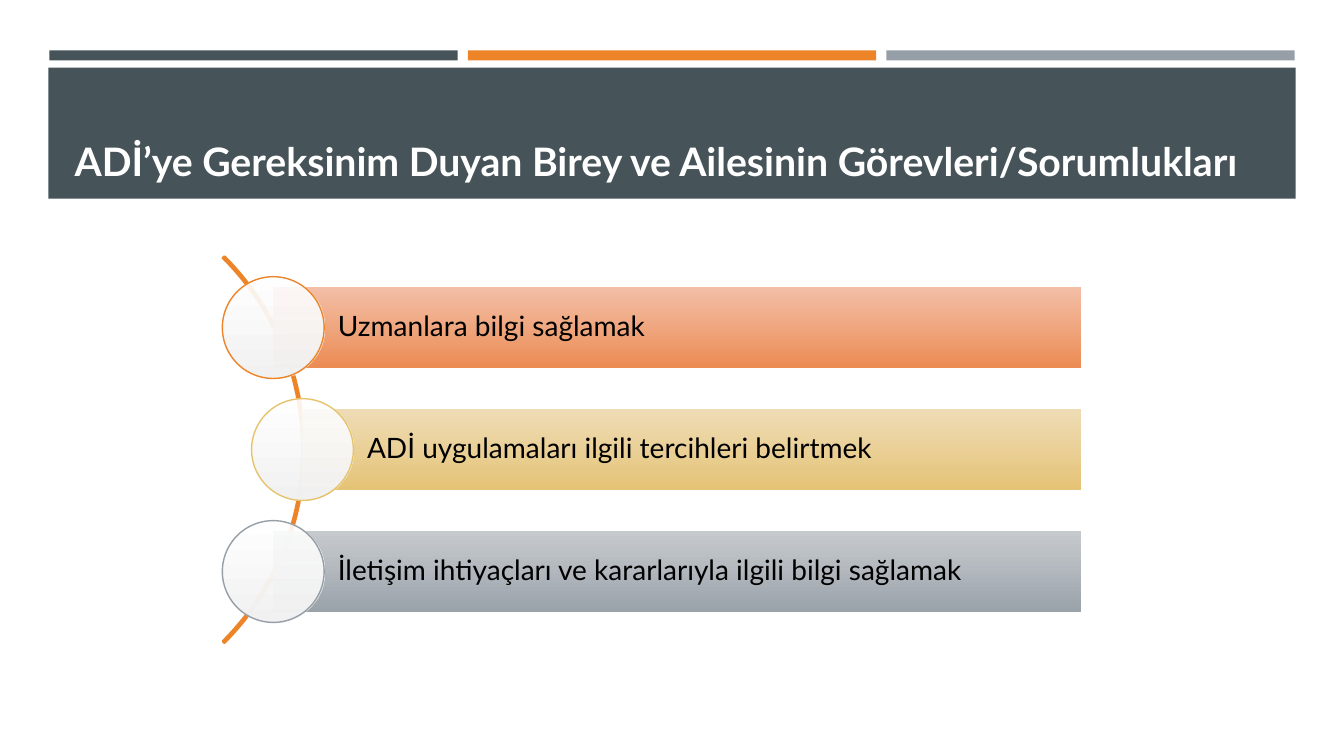
"""Build a slide listing the duties of the individual in need of AAC and their family."""
import pptx
import pptx.dml.color
import pptx.enum.shapes
import pptx.enum.text
import pptx.util
import lxml.etree

Inches = pptx.util.Inches
Pt = pptx.util.Pt
MSO_SHAPE = pptx.enum.shapes.MSO_SHAPE
ANCHOR = pptx.enum.text.MSO_ANCHOR
ALIGN = pptx.enum.text.PP_ALIGN

COLORS = {
    "slate": "465359", "orange": "ED8428", "gray": "969FA7", "gold": "E6C46D",
    "white": "FFFFFF", "black": "000000", "pearl": "F2F2F2",
    "salmon": "F3B89D", "coral": "ED8C53",
    "sand": "EED9AE", "amber": "E6C476",
    "silver": "C0C5C9", "steel": "9BA3AB",
}
FONT = "Lato"


def add_filled_shape(kind, left, top, width, height, colors, line=None, line_width=1):
    """Add a shape filled with one color, or with two from top to bottom."""
    shape = slide.shapes.add_shape(
        kind, Inches(left), Inches(top), Inches(width), Inches(height))
    shape.shadow.inherit = False
    if len(colors) == 1:
        shape.fill.solid()
        shape.fill.fore_color.rgb = rgb(colors[0])
    else:
        shape.fill.gradient()
        shape.fill.gradient_angle = 270
        for stop, position, color in zip(shape.fill.gradient_stops, (0, 1), colors):
            stop.position = position
            stop.color.rgb = rgb(color)
        first_color = shape._element.spPr.find(".//" + pptx.oxml.ns.qn("a:srgbClr"))
        lxml.etree.SubElement(first_color, pptx.oxml.ns.qn("a:alpha"), val="90000")
    if line:
        shape.line.color.rgb = rgb(line)
        shape.line.width = Pt(line_width)
    else:
        shape.line.fill.background()
    return shape


def rgb(name):
    """Return the named color."""
    return pptx.dml.color.RGBColor.from_string(COLORS[name])


presentation = pptx.Presentation()
presentation.slide_width = Inches(13.33)
presentation.slide_height = Inches(7.5)
slide = presentation.slides.add_slide(presentation.slide_layouts[5])

strip_left, strip_width, strip_step = 0.49, 4.05, 4.15
for column, color in enumerate(("slate", "orange", "gray")):
    add_filled_shape(MSO_SHAPE.RECTANGLE, strip_left + column * strip_step, 0.5,
                     strip_width, 0.1, [color])
add_filled_shape(MSO_SHAPE.RECTANGLE, 0.48, 0.67, 12.37, 1.3, ["slate"])

title = slide.shapes.title
slide.shapes._spTree.append(title._element)
title.left, title.top = Inches(0.64), Inches(0.77)
title.width, title.height = Inches(12.06), Inches(1.11)
title.text_frame.word_wrap = True
title.text_frame.auto_size = pptx.enum.text.MSO_AUTO_SIZE.NONE
title.text_frame.vertical_anchor = ANCHOR.BOTTOM
paragraph = title.text_frame.paragraphs[0]
paragraph.alignment = ALIGN.LEFT
run = paragraph.add_run()
run.text = "ADİ’ye Gereksinim Duyan Birey ve Ailesinin Görevleri/Sorumlukları"
run.font.name, run.font.size, run.font.bold = FONT, Pt(28), True
run.font.color.rgb = rgb("white")

arc = add_filled_shape(MSO_SHAPE.BLOCK_ARC, -2.4, 1.75, 5.42, 5.42, ["orange"], "orange", 1.75)
for index, adjustment in enumerate((189, 27, 0.004)):
    arc.adjustments[index] = adjustment

bar_right, bar_height, circle_size = 10.72, 0.8, 1.01
first_center, row_step = 3.25, 1.21
duties = [
    ("Uzmanlara bilgi sağlamak", 2.71, ["salmon", "coral"], "orange"),
    ("ADİ uygulamaları ilgili tercihleri belirtmek", 3.0, ["sand", "amber"], "gold"),
    ("İletişim ihtiyaçları ve kararlarıyla ilgili bilgi sağlamak", 2.71,
     ["silver", "steel"], "gray"),
]
for row, (duty, bar_left, bar_colors, outline) in enumerate(duties):
    center = first_center + row * row_step
    bar = add_filled_shape(MSO_SHAPE.RECTANGLE, bar_left, center - bar_height / 2,
                           bar_right - bar_left, bar_height, bar_colors)
    frame = bar.text_frame
    frame.word_wrap = True
    frame.vertical_anchor = ANCHOR.MIDDLE
    frame.margin_left = Inches(0.64)
    frame.margin_top = frame.margin_right = frame.margin_bottom = Inches(0.06)
    paragraph = frame.paragraphs[0]
    paragraph.alignment = ALIGN.LEFT
    paragraph.line_spacing = 0.9
    run = paragraph.add_run()
    run.text = duty
    run.font.name, run.font.size = FONT, Pt(20)
    run.font.color.rgb = rgb("black")
    add_filled_shape(MSO_SHAPE.OVAL, bar_left - circle_size / 2, center - circle_size / 2,
                     circle_size, circle_size, ["white", "pearl"], outline)

presentation.save("out.pptx")
